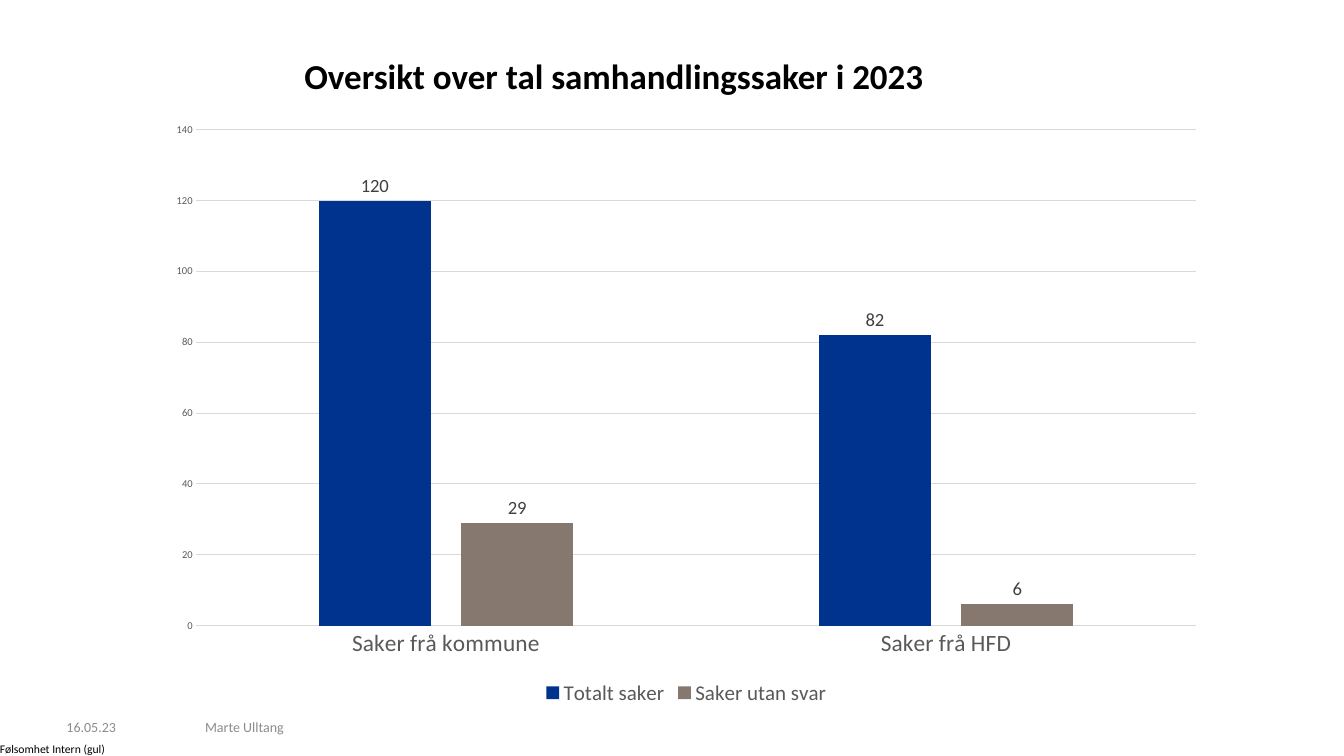
from lxml.etree import SubElement
from pptx import Presentation
from pptx.chart.data import CategoryChartData
from pptx.dml.color import RGBColor
from pptx.enum.chart import (XL_CHART_TYPE, XL_LABEL_POSITION,
                             XL_LEGEND_POSITION, XL_TICK_MARK)
from pptx.enum.text import MSO_ANCHOR, PP_ALIGN
from pptx.util import Cm, Pt

FONT = "Calibri"
COLORS = {
    "black": "000000",
    "footer": "8C8C8C",
    "axis": "595959",
    "label": "404040",
    "grid": "D9D9D9",
    "total": "00338D",
    "unanswered": "86786F",
}
CATEGORIES = ["Saker frå kommune", "Saker frå HFD"]
SERIES = [
    ("Totalt saker", [120, 82], "total"),
    ("Saker utan svar", [29, 6], "unanswered"),
]


def color(name):
    return RGBColor.from_string(COLORS[name])


def style_font(font, size, name, bold=False):
    font.name = FONT
    font.size = Pt(size)
    font.bold = bold
    font.color.rgb = color(name)


def style_line(line, name):
    line.color.rgb = color(name)
    line.width = Pt(0.75)


def add_text(s, box, text, size, name, bold=False, anchor=MSO_ANCHOR.TOP, wrap=True):
    tf = s.shapes.add_textbox(*map(Cm, box)).text_frame
    tf.word_wrap = wrap
    tf.vertical_anchor = anchor
    tf.margin_left = tf.margin_right = tf.margin_top = tf.margin_bottom = 0
    p = tf.paragraphs[0]
    r = p.add_run()
    r.text = text
    style_font(r.font, size, name, bold)
    return p


def add_title(s, box):
    p = add_text(s, box, "Oversikt over tal samhandlingssaker i 2023", 30, "black", True)
    p.alignment = PP_ALIGN.CENTER
    p.line_spacing = Pt(32)


def add_footer(s, box):
    left, top, width, height = box
    author_offset = 4.19
    add_text(s, (left, top, 3.2, height), "16.05.23", 12, "footer",
             anchor=MSO_ANCHOR.MIDDLE)
    add_text(s, (left + author_offset, top, width - author_offset, height),
             "Marte Ulltang", 12, "footer", anchor=MSO_ANCHOR.MIDDLE)


def add_sensitivity(s, box):
    add_text(s, box, "Følsomhet Intern (gul)", 10, "black", wrap=False)


def style_axes(chart):
    category_axis, value_axis = chart.category_axis, chart.value_axis
    for axis, size in ((category_axis, 20), (value_axis, 9)):
        axis.major_tick_mark = axis.minor_tick_mark = XL_TICK_MARK.NONE
        style_font(axis.tick_labels.font, size, "axis")
    style_line(category_axis.format.line, "grid")
    value_axis.format.line.fill.background()
    value_axis.minimum_scale, value_axis.maximum_scale = 0, 140
    value_axis.major_unit = 20
    style_line(value_axis.major_gridlines.format.line, "grid")


def style_series(series, fill_name):
    series.format.fill.solid()
    series.format.fill.fore_color.rgb = color(fill_name)
    series.invert_if_negative = False
    labels = series.data_labels
    labels.show_value = True
    labels.position = XL_LABEL_POSITION.OUTSIDE_END
    style_font(labels.font, 16, "label")


def add_case_chart(s, box):
    data = CategoryChartData()
    data.categories = CATEGORIES
    for name, values, _ in SERIES:
        data.add_series(name, values)
    chart = s.shapes.add_chart(XL_CHART_TYPE.COLUMN_CLUSTERED, *map(Cm, box), data).chart
    chart.has_title = False
    style_font(chart.font, 10, "black")
    chart.has_legend = True
    chart.legend.position = XL_LEGEND_POSITION.BOTTOM
    chart.legend.include_in_layout = False
    style_font(chart.legend.font, 18, "axis")
    style_axes(chart)
    plot = chart.plots[0]
    plot.vary_by_categories = False
    plot.gap_width = 219
    plot.overlap = -27
    for series, (_, _, fill_name) in zip(plot.series, SERIES):
        style_series(series, fill_name)


def main():
    prs = Presentation()
    prs.slide_width, prs.slide_height = Cm(40.64), Cm(22.86)
    s = prs.slides.add_slide(prs.slide_layouts[6])
    add_sensitivity(s, (0, 22.43, 3.28, 0.43))
    add_footer(s, (2.01, 21.69, 29, 0.61))
    add_title(s, (2.01, 1.78, 33.12, 1.37))
    add_case_chart(s, (4.7, 3.38, 32.11, 18.08))
    prs.save("out.pptx")


if __name__ == "__main__":
    main()
